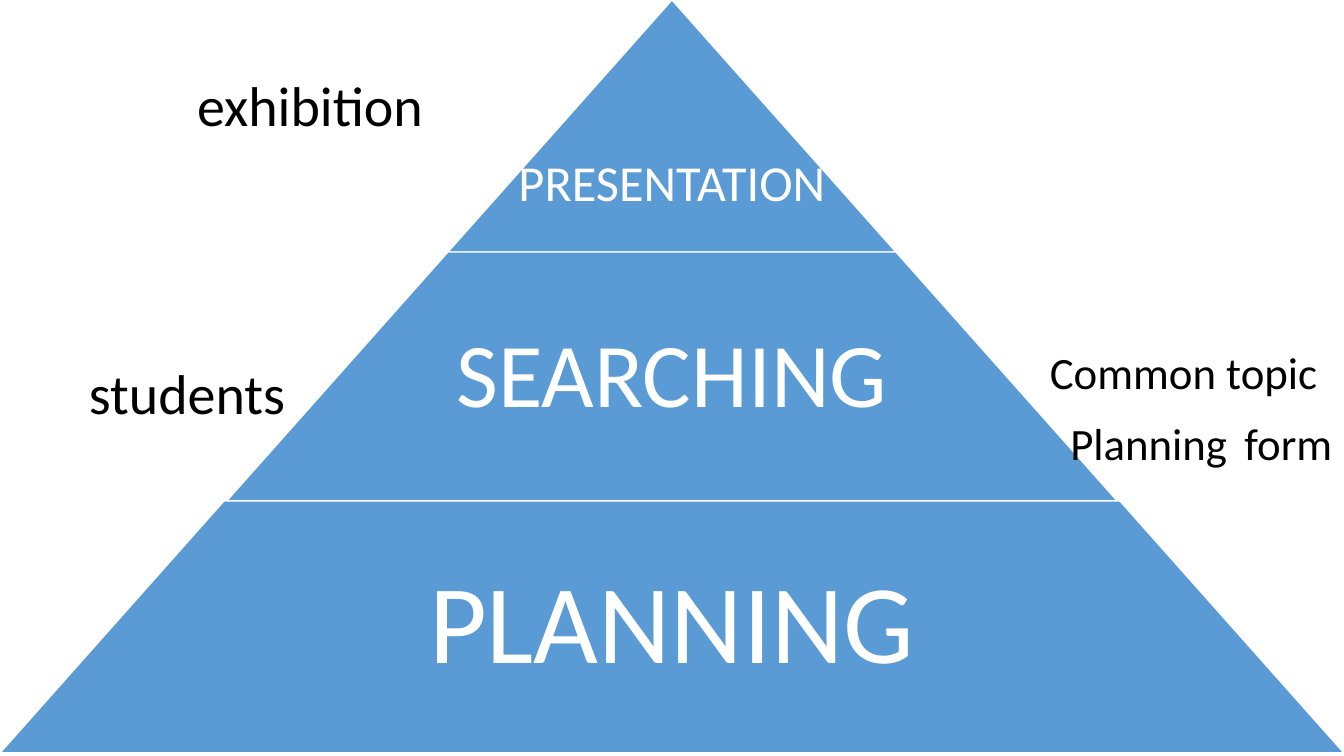
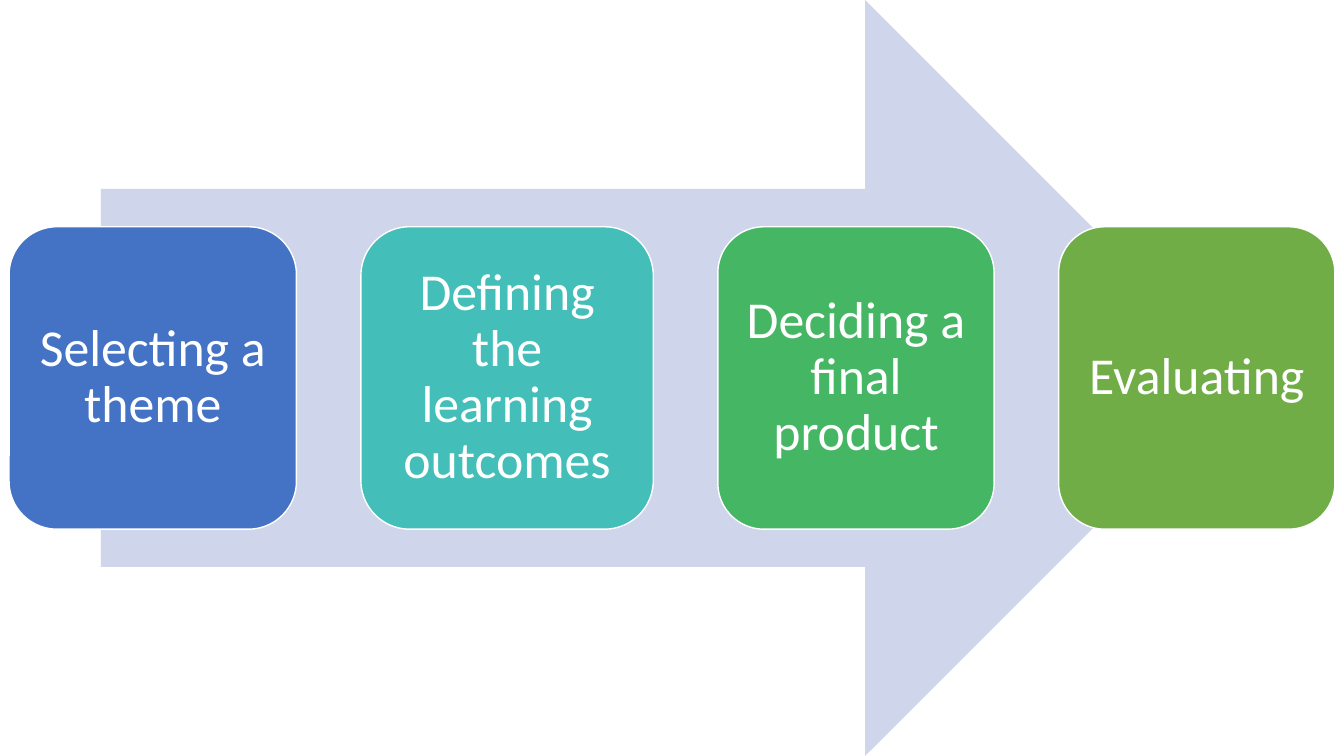
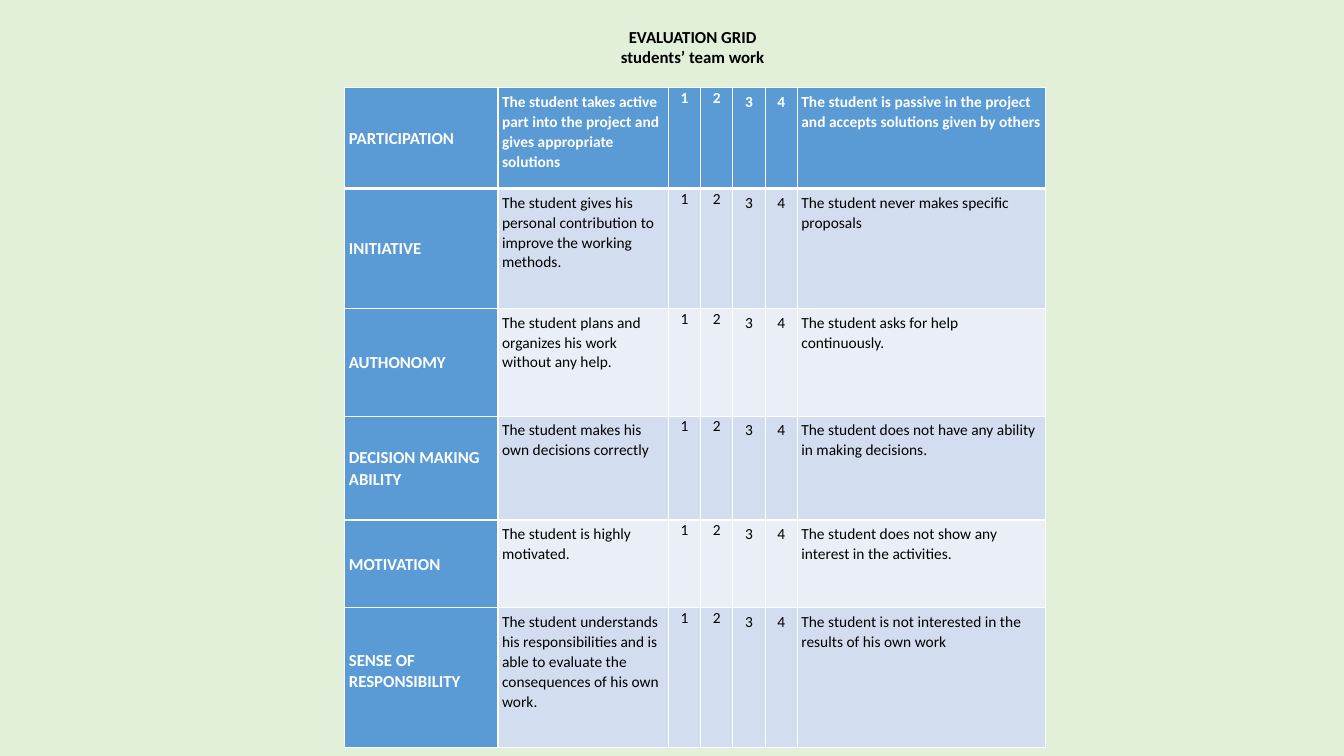
from lxml.etree import SubElement
from pptx import Presentation
from pptx.dml.color import RGBColor
from pptx.enum.shapes import MSO_SHAPE
from pptx.enum.text import MSO_ANCHOR, PP_ALIGN
from pptx.oxml.ns import qn
from pptx.util import Inches, Pt

COLOURS = {
    "white": "FFFFFF", "black": "000000", "blue": "5B9BD5",
    "arrow": "CFD5EA", "theme": "4472C4", "outcomes": "43BEB9",
    "product": "45B664", "evaluating": "70AD47",
    "mint": "E2F0D9", "band_dark": "D2DEEF", "band_light": "EAEFF7",
}
FONT = "Calibri"
WIDTH, HEIGHT = 13.33, 7.5
SIDES = ("left", "top", "right", "bottom")

LEVELS = [
    ("PRESENTATION", 0, 1.84, 36),
    ("SEARCHING", 2.5, 3.75, 65),
    ("PLANNING", 4.97, 6.22, 80),
]
LABELS = [
    ([("Common topic", 32)], (10.3, 3.37, 2.88, 0.64)),
    ([("Planning", 32), (" ", 54), ("form", 32)], (10.5, 3.77, 2.83, 1.01)),
    ([("students", 40)], (0.77, 3.51, 2.17, 0.77)),
    ([("exhibition", 40)], (1.84, 0.65, 2.47, 0.77)),
]
STEPS = [
    ("Selecting a theme", "theme", 0.09, 2.85),
    ("Defining the learning outcomes", "outcomes", 3.58, 2.9),
    ("Deciding a final product", "product", 7.12, 2.74),
    ("Evaluating", "evaluating", 10.5, 2.74),
]
SCORES = ["1", "2", "3", "4"]
GRID_COLUMNS = [1.52, 1.69] + [0.32] * len(SCORES) + [2.46]
CRITERIA = [
    ("PARTICIPATION", 1.0,
     "The student takes active part into the project and gives appropriate solutions",
     "The student is passive in the project and accepts solutions given by others"),
    ("INITIATIVE", 1.19,
     "The student gives his personal contribution to improve the working methods.",
     "The student never makes specific proposals"),
    ("AUTHONOMY", 1.07,
     "The student plans and organizes his work without any help.",
     "The student asks for help continuously."),
    ("DECISION MAKING ABILITY", 1.03,
     "The student makes his own decisions correctly",
     "The student does not have any ability in making decisions."),
    ("MOTIVATION", 0.87,
     "The student is highly motivated.",
     "The student does not show any interest in the activities."),
    ("SENSE OF RESPONSIBILITY", 1.39,
     "The student understands his responsibilities and is able to evaluate "
     "the consequences of his own work.",
     "The student is not interested in the results of his own work"),
]


def colour(name):
    return RGBColor.from_string(COLOURS[name])


def apply(target, values):
    for name, value in values.items():
        setattr(target, name, value)


def set_margins(target, *sizes):
    apply(target, {f"margin_{side}": Inches(size) for side, size in zip(SIDES, sizes)})


def write(frame, lines, shade="black", bold=False, align=PP_ALIGN.CENTER, spacing=1.0):
    for index, spans in enumerate(lines):
        para = frame.add_paragraph() if index else frame.paragraphs[0]
        apply(para, {"alignment": align, "line_spacing": spacing})
        for text, size in spans:
            span = para.add_run()
            span.text = text
            apply(span.font, {"name": FONT, "size": Pt(size), "bold": bold})
            span.font.color.rgb = colour(shade)


def add_page(deck, background="white"):
    page = deck.slides.add_slide(deck.slide_layouts[6])
    page.background.fill.solid()
    page.background.fill.fore_color.rgb = colour(background)
    return page


def add_panel(page, kind, place, fill, outlined=True):
    panel = page.shapes.add_shape(kind, *map(Inches, place))
    panel.shadow.inherit = False
    panel.fill.solid()
    panel.fill.fore_color.rgb = colour(fill)
    if outlined:
        panel.line.color.rgb = colour("white")
        panel.line.width = Pt(1)
    else:
        panel.line.fill.background()
    return panel


def add_text(page, place, lines, anchor=MSO_ANCHOR.MIDDLE, wrap=True, **look):
    frame = page.shapes.add_textbox(*map(Inches, place)).text_frame
    apply(frame, {"word_wrap": wrap, "vertical_anchor": anchor})
    write(frame, lines, **look)


def build_pyramid(page, centre, step_width, level_height):
    for index, (text, top, middle, size) in enumerate(LEVELS):
        width = step_width * (index + 1)
        left = centre - width / 2
        level = add_panel(page, MSO_SHAPE.TRAPEZOID, (left, top, width, level_height), "blue")
        level.adjustments[0] = step_width / 2 / level_height
        text_height = size / 50
        add_text(page, (left, middle - text_height / 2, width, text_height),
                 [[(text, size)]], shade="white", spacing=0.9)


def build_labels(page):
    for spans, place in LABELS:
        add_text(page, place, [spans], anchor=MSO_ANCHOR.TOP, wrap=False)


def build_process(page, left, width, step_top, step_height):
    add_panel(page, MSO_SHAPE.RIGHT_ARROW, (left, 0, width, HEIGHT), "arrow", outlined=False)
    for text, fill, step_left, step_width in STEPS:
        place = (step_left, step_top, step_width, step_height)
        frame = add_panel(page, MSO_SHAPE.ROUNDED_RECTANGLE, place, fill).text_frame
        apply(frame, {"word_wrap": True, "vertical_anchor": MSO_ANCHOR.MIDDLE})
        set_margins(frame, *[0.15] * 4)
        write(frame, [[(text, 37)]], shade="white", spacing=0.9)


def set_borders(cell, widths):
    properties = cell._tc.get_or_add_tcPr()
    for index, (tag, width) in enumerate(widths.items()):
        line = properties.makeelement(qn(f"a:{tag}"), {"w": str(Pt(width))})
        fill = SubElement(line, qn("a:solidFill"))
        SubElement(fill, qn("a:srgbClr"), val=COLOURS["white"])
        properties.insert(index, line)


def fill_cell(cell, text, row, column):
    is_name, is_header = column == 0, row == 0
    is_score = 2 <= column < 2 + len(SCORES)
    band = "band_dark" if row % 2 else "band_light"
    strong = is_name or is_header
    cell.fill.solid()
    cell.fill.fore_color.rgb = colour("blue" if strong else band)
    cell.vertical_anchor = MSO_ANCHOR.MIDDLE if is_name else MSO_ANCHOR.TOP
    margin = 0 if column in (2, 3) else 0.04
    is_last_name = is_name and row == len(CRITERIA) - 1
    set_margins(cell, margin, margin, margin, 0.18 if is_last_name else margin)
    write(cell.text_frame, [[(text, 12 if is_name else 11)]],
          shade="white" if strong else "black", bold=strong,
          align=PP_ALIGN.CENTER if is_score else PP_ALIGN.LEFT, spacing=1.05)
    set_borders(cell, {"lnL": 1, "lnR": 1, "lnT": 3 if row == 1 else 1,
                       "lnB": 3 if is_header else 1})


def build_grid(page, left, top):
    heights = [height for _, height, _, _ in CRITERIA]
    table = page.shapes.add_table(
        len(CRITERIA), len(GRID_COLUMNS),
        *map(Inches, (left, top, sum(GRID_COLUMNS), sum(heights)))).table
    apply(table, {"first_row": False, "horz_banding": False})
    for column, width in zip(table.columns, GRID_COLUMNS):
        column.width = Inches(width)
    for row, (name, height, best, worst) in enumerate(CRITERIA):
        table.rows[row].height = Inches(height)
        for column, text in enumerate([name, best, *SCORES, worst]):
            fill_cell(table.cell(row, column), text, row, column)


def main():
    deck = Presentation()
    apply(deck, {"slide_width": Inches(WIDTH), "slide_height": Inches(HEIGHT)})

    page = add_page(deck)
    build_pyramid(page, WIDTH / 2, WIDTH / 3, 2.5)
    build_labels(page)

    build_process(add_page(deck), 1, 11.33, 2.25, 3)

    page = add_page(deck, "mint")
    build_grid(page, 3.42, 0.87)
    add_text(page, (5.37, 0.2, 3, 0.52),
             [[("EVALUATION GRID", 12)], [("students’ team work", 12)]], bold=True)

    deck.save("out.pptx")


if __name__ == "__main__":
    main()
